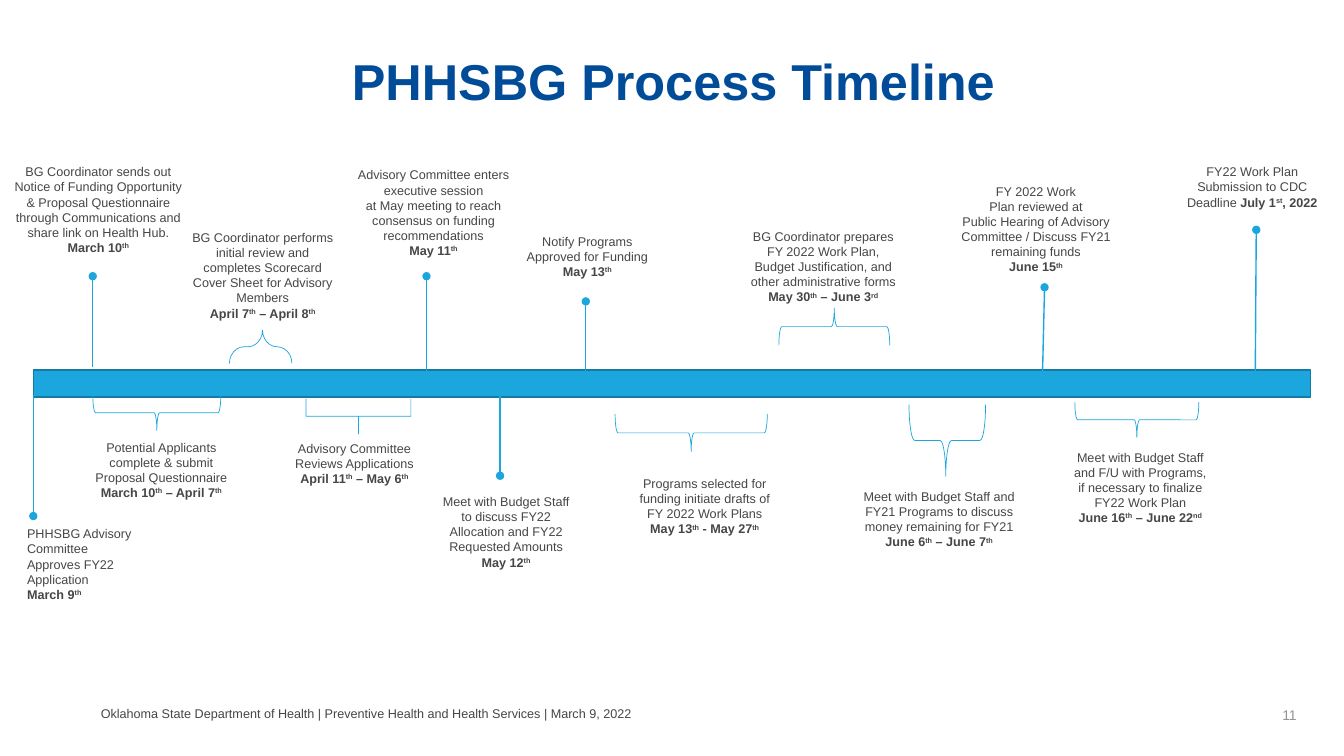
from lxml import etree
from pptx import Presentation
from pptx.dml.color import RGBColor
from pptx.enum.shapes import MSO_CONNECTOR, MSO_SHAPE
from pptx.enum.text import MSO_ANCHOR, PP_ALIGN
from pptx.oxml.ns import qn
from pptx.util import Inches, Pt

LEFT, CENTER, RIGHT = PP_ALIGN.LEFT, PP_ALIGN.CENTER, PP_ALIGN.RIGHT
TOP, MIDDLE = MSO_ANCHOR.TOP, MSO_ANCHOR.MIDDLE
STRAIGHT = MSO_CONNECTOR.STRAIGHT
RECTANGLE, BRACE = MSO_SHAPE.RECTANGLE, MSO_SHAPE.RIGHT_BRACE

NAVY = RGBColor(0x00, 0x4C, 0x99)
SKY = RGBColor(0x1C, 0xA6, 0xDE)
STEEL = RGBColor(0x15, 0x7B, 0xA4)
CHARCOAL = RGBColor(0x46, 0x46, 0x46)
GRAY = RGBColor(0x94, 0x94, 0x94)

# The grid has square cells, ten to the inch
COLUMNS, ROWS = 133.3, 75
DOWN, UP = 90, 270

# Notes: left, top, width, line count, paragraphs ("*" starts bold, "^" toggles superscript)
NOTES = [
    (-0.2, 15.8, 19.9, 6, ["BG Coordinator sends out Notice of Funding Opportunity",
                           "& Proposal Questionnaire through Communications and share link on Health Hub.",
                           "*March 10^th"]),
    (17.6, 22.3, 16.9, 6, ["BG Coordinator performs initial review and completes Scorecard "
                           "Cover Sheet for Advisory Members", "*April 7^th^ – April 8^th"]),
    (33.6, 16.1, 18.8, 6, ["Advisory Committee enters executive session",
                           "at May meeting to reach consensus on funding recommendations",
                           "*May 11^th"]),
    (51.2, 22.7, 14.1, 3, ["Notify Programs Approved for Funding", "*May 13^th"]),
    (73.2, 22.2, 16.9, 5, ["BG Coordinator prepares FY 2022 Work Plan, Budget Justification, "
                           "and other administrative forms", "*May 30^th^ – June 3^rd"]),
    (94.3, 17.7, 16.9, 6, ["FY 2022 Work", "Plan reviewed at",
                           "Public Hearing of Advisory Committee / Discuss FY21 remaining funds",
                           "*June 15^th"]),
    (116.3, 15.8, 15.8, 3, ["FY22 Work Plan Submission to CDC Deadline *July 1^st^, 2022"]),
    (8.1, 43.1, 15.8, 4, ["Potential Applicants complete & submit Proposal Questionnaire "
                          "*March 10^th^ – April 7^th"]),
    (26.3, 43.2, 17.7, 3, ["Advisory Committee Reviews Applications",
                           "*April 11^th^ – May 6^th"]),
    (42.4, 48.5, 15.6, 5, ["Meet with Budget Staff to discuss FY22 Allocation and FY22 "
                           "Requested Amounts", "*May 12^th"]),
    (62.1, 46.7, 15.6, 4, ["Programs selected for funding initiate drafts of FY 2022 Work Plans",
                           "*May 13^th^ - May 27^th"]),
    (84.3, 48, 17.7, 4, ["Meet with Budget Staff and FY21 Programs to discuss money "
                         "remaining for FY21", "*June 6^th^ – June 7^th"]),
    (105.1, 44.1, 16, 5, ["Meet with Budget Staff and F/U with Programs, if necessary to "
                          "finalize FY22 Work Plan", "*June 16^th^ – June 22^nd"]),
]
FIRST_NOTE = (1.7, 51.7, 12.5, 5, ["PHHSBG Advisory Committee", "Approves FY22 Application",
                                   "*March 9^th"])

# Pins: start column and row on the bar, end column and row at the dot
PINS = [
    (3.3, 39.2, 3.3, 51.2), (9.2, 36.4, 9.2, 27.4), (42.3, 37, 42.3, 27.4),
    (49.6, 39.2, 49.6, 47.2), (58.1, 37.4, 58.1, 29.9),
    (103.4, 37.1, 103.6, 28.5), (124.5, 37, 124.6, 22.8),
]

# Braces: center column and row, span, depth, direction, curve, tip position
BRACES = [
    (15.55, 40.95, 12.7, 3.5, DOWN, 0.08, 0.5),
    (25.85, 34.4, 6.2, 3.3, UP, 0.64, 0.53),
    (35.55, 41.3, 10.4, 3.5, DOWN, 0, 0.5),
    (68.55, 42.95, 15.1, 3.7, DOWN, 0.08, 0.5),
    (82.75, 32.4, 11, 3.7, UP, 0.08, 0.5),
    (93.95, 43.7, 7.6, 7.1, DOWN, 0.08, 0.52),
    (112.75, 41.65, 12.3, 3.5, DOWN, 0.08, 0.5),
]


class TimelineSlide:
    font = "Arial"

    def __init__(self, presentation):
        self.slide = presentation.slides.add_slide(presentation.slide_layouts[6])
        self.column = presentation.slide_width / COLUMNS
        self.row = presentation.slide_height / ROWS

    def place(self, left, top, width, height):
        return (round(left * self.column), round(top * self.row),
                round(width * self.column), round(height * self.row))

    def text(self, box, paragraphs, size=9, color=CHARCOAL, align=CENTER, anchor=TOP,
             bold=None, margin=0.1):
        frame = self.slide.shapes.add_textbox(*self.place(*box)).text_frame
        frame.word_wrap = True
        frame.vertical_anchor = anchor
        frame.margin_left = Inches(margin)
        for index, content in enumerate(paragraphs):
            paragraph = frame.paragraphs[0] if index == 0 else frame.add_paragraph()
            paragraph.alignment = align
            font = paragraph.font
            font.name, font.size, font.bold = self.font, Pt(size), bold
            font.color.rgb = color
            self.fill_runs(paragraph, content)

    def fill_runs(self, paragraph, content):
        plain, _, date = content.partition("*")
        if plain:
            paragraph.add_run().text = plain
        for index, part in enumerate(date.split("^") if date else []):
            run = paragraph.add_run()
            run.text = part
            run.font.bold = True
            if index % 2:
                run._r.get_or_add_rPr().set("baseline", "30000")

    def note(self, left, top, width, lines, paragraphs, align=CENTER):
        self.text((left, top, width, 1.1 + 1.5 * lines), paragraphs, align=align)

    def bar(self, *box):
        shape = self.slide.shapes.add_shape(RECTANGLE, *self.place(*box))
        shape.shadow.inherit = False
        shape.fill.solid()
        shape.fill.fore_color.rgb = SKY
        shape.line.color.rgb = STEEL
        shape.line.width = Pt(1)

    def pin(self, *ends):
        connector = self.slide.shapes.add_connector(STRAIGHT, *self.place(*ends))
        connector.line.color.rgb = SKY
        connector.line.width = Pt(1)
        etree.SubElement(connector.line._get_or_add_ln(), qn("a:tailEnd"), type="oval")
        etree.SubElement(connector._element.spPr, qn("a:effectLst"))

    def brace(self, center, middle, span, depth, rotation, curve, tip):
        box = self.place(center - depth / 2, middle - span / 2, depth, span)
        shape = self.slide.shapes.add_shape(BRACE, *box)
        shape.rotation = rotation
        shape.adjustments[0], shape.adjustments[1] = curve, tip
        shape.shadow.inherit = False
        shape.fill.background()
        shape.line.color.rgb = SKY
        shape.line.width = Pt(0.5)


def main():
    presentation = Presentation()
    presentation.slide_width, presentation.slide_height = Inches(13.33), Inches(7.5)
    timeline = TimelineSlide(presentation)

    # Title and footer
    timeline.text((5, 4.5, 124.6, 9.2), ["PHHSBG Process Timeline"], size=36, color=NAVY,
                  bold=True, margin=0)
    timeline.text((10, 69.7, 89, 2.2), ["Oklahoma State Department of Health | Preventive Health "
                                        "and Health Services | March 9, 2022"],
                  align=LEFT, anchor=MIDDLE, margin=0)
    timeline.text((99.6, 69.8, 30, 2.2), ["11"], size=10, color=GRAY, align=RIGHT, anchor=MIDDLE)

    # Timeline bar with its markers
    timeline.bar(3.3, 36.7, 126.7, 2.7)
    for pin in PINS:
        timeline.pin(*pin)
    for brace in BRACES:
        timeline.brace(*brace)

    # Event notes
    timeline.note(*FIRST_NOTE, align=LEFT)
    for note in NOTES:
        timeline.note(*note)

    presentation.save("out.pptx")


if __name__ == "__main__":
    main()
